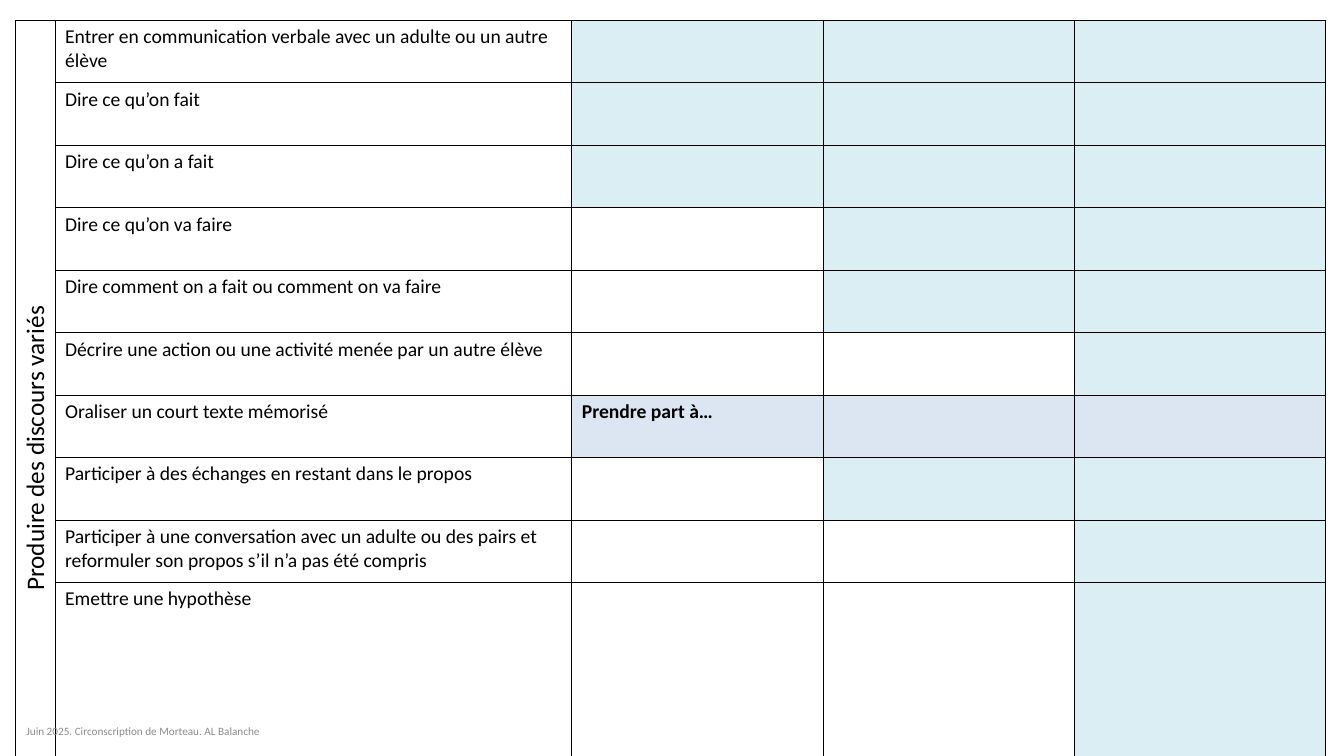
from lxml.etree import SubElement
from pptx import Presentation
from pptx.dml.color import RGBColor
from pptx.enum.text import MSO_ANCHOR as Anchor, PP_ALIGN as Align
from pptx.oxml.ns import qn
from pptx.util import Inches, Pt

FONT = "Calibri"
BLACK = RGBColor(0x00, 0x00, 0x00)
GREY = RGBColor(0x8C, 0x8C, 0x8C)
AQUA = RGBColor(0xDB, 0xEE, 0xF4)
BLUE = RGBColor(0xDC, 0xE6, 0xF2)

TITLE = "Produire des discours variés"
WIDTHS = [0.59, 7.69, 3.74, 3.74, 3.74]
HEIGHT = 0.93

# Skill, number of shaded cells at the right, shade, note in the first level
SKILLS = [
    ("Entrer en communication verbale avec un adulte ou un autre élève", 3, AQUA, ""),
    ("Dire ce qu’on fait", 3, AQUA, ""),
    ("Dire ce qu’on a fait", 3, AQUA, ""),
    ("Dire ce qu’on va faire", 2, AQUA, ""),
    ("Dire comment on a fait ou comment on va faire", 2, AQUA, ""),
    ("Décrire une action ou une activité menée par un autre élève", 1, AQUA, ""),
    ("Oraliser un court texte mémorisé", 3, BLUE, "Prendre part à…"),
    ("Participer à des échanges en restant dans le propos", 2, AQUA, ""),
    ("Participer à une conversation avec un adulte ou des pairs et "
     "reformuler son propos s’il n’a pas été compris", 1, AQUA, ""),
    ("Emettre une hypothèse", 1, AQUA, ""),
]


def add_run(para, text, size, color=BLACK, bold=False):
    run = para.add_run()
    run.text = text
    font = run.font
    font.name, font.size, font.bold = FONT, Pt(size), bold
    font.color.rgb = color


def add_edges(cell):
    props = cell._tc.get_or_add_tcPr()
    for side in ("lnL", "lnR", "lnT", "lnB"):
        line = SubElement(props, qn(f"a:{side}"), w=str(Pt(1)))
        fill = SubElement(line, qn("a:solidFill"))
        SubElement(fill, qn("a:srgbClr"), val=str(BLACK))


def style_cell(cell, shade=None):
    cell.margin_left = cell.margin_right = Inches(0.15)
    cell.margin_top = cell.margin_bottom = Inches(0.07)
    add_edges(cell)
    if shade is None:
        cell.fill.background()
    else:
        cell.fill.solid()
        cell.fill.fore_color.rgb = shade


def add_grid(slide):
    rows, cols = len(SKILLS), len(WIDTHS)
    frame = slide.shapes.add_table(rows, cols, Inches(0.23), Inches(0.3),
                                   Inches(sum(WIDTHS)), Inches(HEIGHT * rows))
    table = frame.table
    table.first_row = table.horz_banding = False
    for col, width in zip(table.columns, WIDTHS):
        col.width = Inches(width)

    # Skills and shaded levels
    for r, (skill, count, shade, note) in enumerate(SKILLS):
        table.rows[r].height = Inches(HEIGHT)
        for c in range(cols):
            style_cell(table.cell(r, c), shade if c >= cols - count else None)
        add_run(table.cell(r, 1).text_frame.paragraphs[0], skill, 21)
        if note:
            add_run(table.cell(r, 2).text_frame.paragraphs[0], note, 21, bold=True)

    # Upright heading over all rows
    head = table.cell(0, 0)
    head.merge(table.cell(rows - 1, 0))
    head.vertical_anchor = Anchor.MIDDLE
    head._tc.get_or_add_tcPr().set("vert", "vert270")
    para = head.text_frame.paragraphs[0]
    para.alignment = Align.CENTER
    add_run(para, TITLE, 27)


def add_footer(slide, text):
    box = slide.shapes.add_textbox(Inches(0.17), Inches(10.71), Inches(3.92), Inches(0.33))
    frame = box.text_frame
    frame.word_wrap = True
    frame.vertical_anchor = Anchor.MIDDLE
    para = frame.paragraphs[0]
    para.alignment = Align.CENTER
    add_run(para, text, 12, GREY)


def main():
    deck = Presentation()
    deck.slide_width, deck.slide_height = Inches(20), Inches(11.25)
    slide = deck.slides.add_slide(deck.slide_layouts[6])
    add_grid(slide)
    add_footer(slide, "Juin 2025. Circonscription de Morteau. AL Balanche")
    deck.save("out.pptx")


if __name__ == "__main__":
    main()
